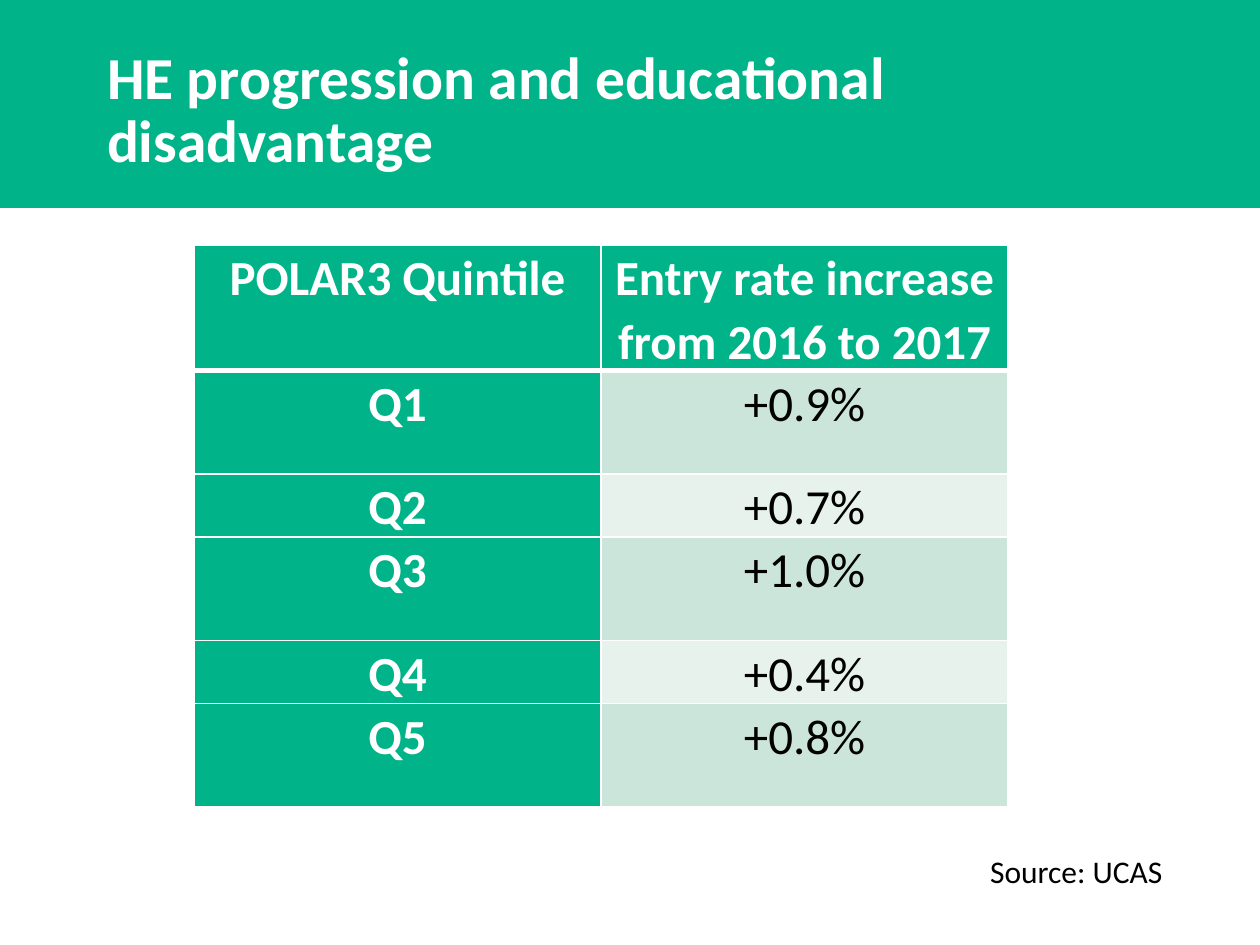
from lxml import etree
from pptx import Presentation, util as u
from pptx.dml.color import RGBColor
from pptx.enum import shapes, text
from pptx.oxml.ns import qn

WIDE, HIGH = 10, 7.5
GREEN, WHITE, BLACK = "00B388", "FFFFFF", "000000"
BANDS = "CCE5DA", "E7F2ED"
ROWS = [
    ("POLAR3 Quintile", "Entry rate increase from 2016 to 2017"),
    ("Q1", "+0.9%"),
    ("Q2", "+0.7%"),
    ("Q3", "+1.0%"),
    ("Q4", "+0.4%"),
    ("Q5", "+0.8%"),
]
HEAD, TALL, LOW = 0.91, 0.82, 0.44
HEAVY, THIN = 3, 1


def tint(code):
    return RGBColor.from_string(code)


def apply(item, form):
    for name, value in form.items():
        setattr(item, name, value)


def place(left, top, wide, high):
    shares = (left, WIDE), (top, HIGH), (wide, WIDE), (high, HIGH)
    return [u.Inches(share * size) for share, size in shares]


def paint(item, code):
    item.fill.solid()
    item.fill.fore_color.rgb = tint(code)


def write(frame, words, size, code, bold=False, form=None):
    para = frame.paragraphs[0]
    apply(para, form or {})
    run = para.add_run()
    run.text = words
    apply(run.font, {"name": "Calibri", "size": u.Pt(size), "bold": bold})
    run.font.color.rgb = tint(code)


def add_band(slide):
    band = slide.shapes.add_shape(
        shapes.MSO_SHAPE.RECTANGLE, *place(0, 0, 1, 0.22))
    band.shadow.inherit = False
    paint(band, GREEN)
    band.line.fill.background()


def add_text(slide, box, words, size, code, bold=False, frame=None, para=None):
    body = slide.shapes.add_textbox(*place(*box)).text_frame
    apply(body, {"word_wrap": True, **(frame or {})})
    write(body, words, size, code, bold, para)


def edge(cell, side, width):
    props = cell._tc.get_or_add_tcPr()
    line = etree.SubElement(props, qn("a:ln" + side), w=str(u.Pt(width)))
    fill = etree.SubElement(line, qn("a:solidFill"))
    etree.SubElement(fill, qn("a:srgbClr"), val=WHITE)


def style(cell, row, col, words):
    label = row == 0 or col == 0
    for side in "LRTB":
        heavy = (row, side) in ((0, "B"), (1, "T"))
        edge(cell, side, HEAVY if heavy else THIN)
    paint(cell, GREEN if label else BANDS[(row - 1) % 2])
    pad = u.Inches(0.07)
    apply(cell, {"margin_left": pad, "margin_right": pad,
                 "margin_top": 0, "margin_bottom": 0})
    write(cell.text_frame, words, 28, WHITE if label else BLACK, label,
          {"alignment": text.PP_ALIGN.CENTER, "line_spacing": 1.07})


def add_grid(slide):
    box = place(0.154, 0.259, 0.646, 0.567)
    grid = slide.shapes.add_table(len(ROWS), len(ROWS[0]), *box).table
    for row, pair in enumerate(ROWS):
        high = HEAD if row == 0 else TALL if row % 2 else LOW
        grid.rows[row].height = u.Inches(high)
        for col, words in enumerate(pair):
            style(grid.cell(row, col), row, col, words)


def main():
    deck = Presentation()
    apply(deck, {"slide_width": u.Inches(WIDE), "slide_height": u.Inches(HIGH)})
    slide = deck.slides.add_slide(deck.slide_layouts[6])
    add_band(slide)
    flush = {"margin_" + side: 0 for side in ("left", "top", "right", "bottom")}
    add_text(slide, (0.085, 0.05, 0.88, 0.135),
             "HE progression and educational disadvantage", 34, WHITE, True,
             {"vertical_anchor": text.MSO_ANCHOR.BOTTOM, **flush},
             {"line_spacing": u.Pt(36)})
    add_text(slide, (0.776, 0.895, 0.346, 0.053), "Source: UCAS", 18, BLACK)
    add_grid(slide)
    deck.save("out.pptx")


if __name__ == "__main__":
    main()
